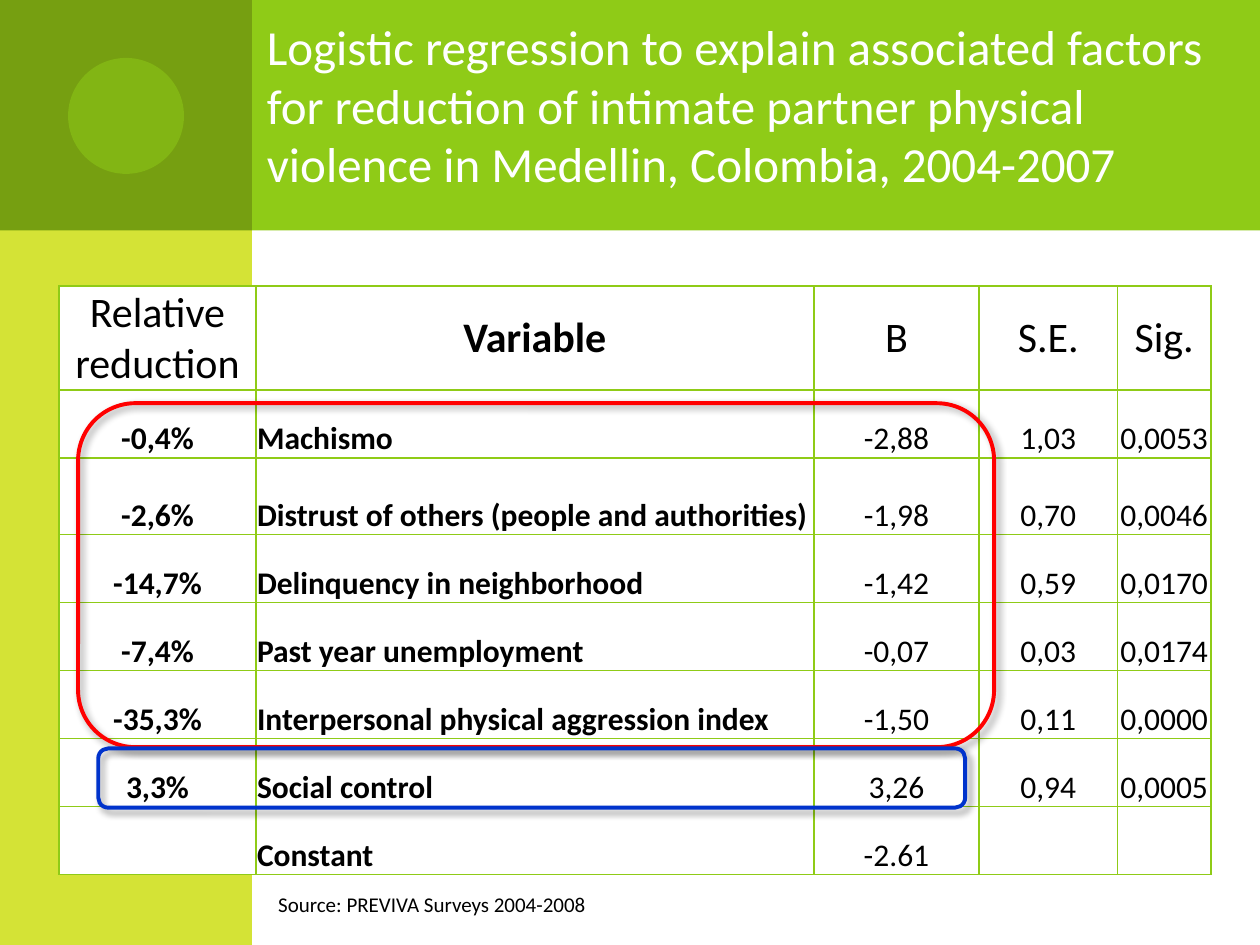
"""Build the slide on factors for reduction of intimate partner violence."""
from lxml.etree import SubElement
from pptx import Presentation
from pptx.dml.color import RGBColor
from pptx.enum.shapes import MSO_SHAPE as Shape
from pptx.enum.text import MSO_ANCHOR as Anchor, PP_ALIGN as Align
from pptx.oxml import parse_xml
from pptx.oxml.ns import nsdecls, qn
from pptx.util import Inches, Pt

COLORS = {
    "green": "8FCB17", "lime": "D4E336", "olive": "769F11",
    "white": "FFFFFF", "black": "000000", "red": "FF0000", "blue": "0033CC",
}
RGB = {name: RGBColor.from_string(code) for name, code in COLORS.items()}

deck = Presentation()
deck.slide_width, deck.slide_height = Inches(10), Inches(7.5)
slide = deck.slides.add_slide(deck.slide_layouts[6])


def share(left, top, width, height):
    """Turn percentages of the slide into lengths."""
    across, down = deck.slide_width / 100, deck.slide_height / 100
    return int(left * across), int(top * down), int(width * across), int(height * down)


def style(paragraph, size, color, bold=False):
    """Format every run of a paragraph."""
    for run in paragraph.runs:
        run.font.name, run.font.size, run.font.bold = "Calibri", Pt(size), bold
        run.font.color.rgb = RGB[color]


for kind, color, area in [
    (Shape.RECTANGLE, "green", (5, 0, 95, 24.4)),
    (Shape.RECTANGLE, "lime", (0, 0, 20, 100)),
    (Shape.RECTANGLE, "olive", (0, 0, 20, 24.4)),
    (Shape.OVAL, "green", (5.4, 6.13, 9.2, 12.27)),
]:
    panel = slide.shapes.add_shape(kind, *share(*area))
    panel.shadow.inherit = False
    panel.fill.solid()
    panel.fill.fore_color.rgb = RGB[color]
    panel.line.fill.background()
tint = panel._element.spPr.find(qn("a:solidFill"))[0]
SubElement(tint, qn("a:alpha"), val="50000")

results = [
    ("Relative reduction", "Variable", "B", "S.E.", "Sig."),
    ("-0,4%", "Machismo", "-2,88", "1,03", "0,0053"),
    ("-2,6%", "Distrust of others (people and authorities)", "-1,98", "0,70", "0,0046"),
    ("-14,7%", "Delinquency in neighborhood", "-1,42", "0,59", "0,0170"),
    ("-7,4%", "Past year unemployment", "-0,07", "0,03", "0,0174"),
    ("-35,3%", "Interpersonal physical aggression index", "-1,50", "0,11", "0,0000"),
    ("3,3%", "Social control", "3,26", "0,94", "0,0005"),
    ("", "Constant", "-2.61", "", ""),
]
column_shares = [15.6, 44.3, 13.1, 11, 7.4]
row_shares = [10.93, 7.2, 8.13] + [7.2] * 5
area = share(4.7, 30.27, sum(column_shares), sum(row_shares))
regression = slide.shapes.add_table(len(results), len(column_shares), *area).table
for column, width in zip(regression.columns, column_shares):
    column.width = int(deck.slide_width * width / 100)
for row, height in zip(regression.rows, row_shares):
    row.height = int(deck.slide_height * height / 100)

for r, values in enumerate(results):
    for c, value in enumerate(values):
        cell = regression.cell(r, c)
        cell.margin_left = cell.margin_right = cell.margin_top = Inches(0.01)
        cell.margin_bottom = 0
        cell.vertical_anchor = Anchor.BOTTOM if r else Anchor.MIDDLE
        cell.fill.solid()
        cell.fill.fore_color.rgb = RGB["white"]
        entry = cell.text_frame.paragraphs[0]
        entry.text = value
        entry.alignment = Align.LEFT if r and c == 1 else Align.CENTER
        style(entry, 18 if r else 24, "black", c == 1 or (r > 0 and c == 0))
        for position, side in enumerate(["lnL", "lnR", "lnT", "lnB"]):
            cell._tc.tcPr.insert(position, parse_xml(
                f'<a:{side} {nsdecls("a")} w="12700"><a:solidFill>'
                f'<a:srgbClr val="{COLORS["green"]}"/></a:solidFill></a:{side}>'))

for color, area in [
    ("red", (6.2, 42.67, 72.7, 36.4)),
    ("blue", (7.8, 79.2, 68.8, 6.27)),
]:
    highlight = slide.shapes.add_shape(Shape.ROUNDED_RECTANGLE, *share(*area))
    highlight.fill.background()
    highlight.line.color.rgb = RGB[color]
    highlight.line.width = Pt(2.25)
    highlight._element.spPr.append(parse_xml(
        f'<a:effectLst {nsdecls("a")}><a:outerShdw blurRad="50800" dist="38100" '
        f'dir="2700000" algn="tl" rotWithShape="0"><a:srgbClr val="{COLORS["black"]}">'
        '<a:alpha val="40000"/></a:srgbClr></a:outerShdw></a:effectLst>'))

title = ("Logistic regression to explain associated factors for reduction of "
         "intimate partner physical violence in Medellin, Colombia, 2004-2007")
for wording, size, color, area in [
    ("Source: PREVIVA Surveys 2004-2008", 12, "black", (21.1, 93.73, 40.6, 4)),
    (title, 28, "white", (20.2, 1.07, 79.7, 20.13)),
]:
    frame = slide.shapes.add_textbox(*share(*area)).text_frame
    frame.word_wrap = True
    frame.text = wording
    style(frame.paragraphs[0], size, color)

deck.save("out.pptx")
